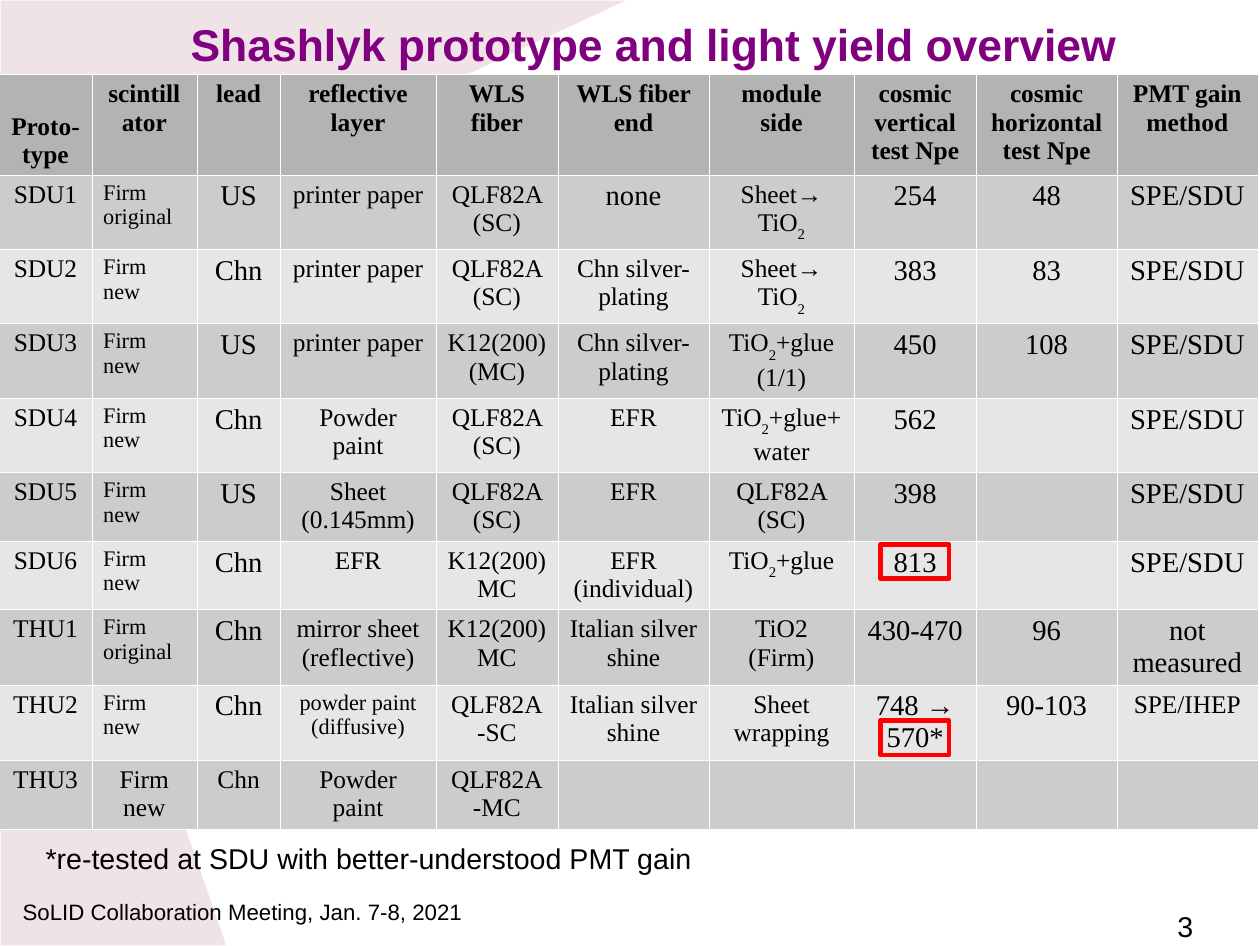
from lxml import etree
from pptx import Presentation
from pptx.dml.color import RGBColor
from pptx.enum.shapes import MSO_SHAPE as Preset
from pptx.enum.text import MSO_ANCHOR as Anchor, PP_ALIGN as Align
from pptx.oxml.ns import qn
from pptx.util import Pt

# Content: "₂" marks a subscript 2
HEADERS = ["Proto-type", "scintillator", "lead", "reflective layer", "WLS fiber",
           "WLS fiber end", "module side", "cosmic vertical test Npe",
           "cosmic horizontal test Npe", "PMT gain method"]
PROTOTYPES = [
    ["SDU1", "Firm original", "US", "printer paper", "QLF82A (SC)", "none",
     "Sheet→ TiO₂", "254", "48", "SPE/SDU"],
    ["SDU2", "Firm new", "Chn", "printer paper", "QLF82A (SC)", "Chn silver-plating",
     "Sheet→ TiO₂", "383", "83", "SPE/SDU"],
    ["SDU3", "Firm new", "US", "printer paper", "K12(200) (MC)", "Chn silver-plating",
     "TiO₂+glue (1/1)", "450", "108", "SPE/SDU"],
    ["SDU4", "Firm new", "Chn", "Powder paint", "QLF82A (SC)", "EFR",
     "TiO₂+glue+water", "562", "", "SPE/SDU"],
    ["SDU5", "Firm new", "US", "Sheet (0.145mm)", "QLF82A (SC)", "EFR",
     "QLF82A (SC)", "398", "", "SPE/SDU"],
    ["SDU6", "Firm new", "Chn", "EFR", "K12(200)MC", "EFR (individual)",
     "TiO₂+glue", "813", "", "SPE/SDU"],
    ["THU1", "Firm original", "Chn", "mirror sheet (reflective)", "K12(200)MC",
     "Italian silver shine", "TiO2 (Firm)", "430-470", "96", "not measured"],
    ["THU2", "Firm new", "Chn", "powder paint (diffusive)", "QLF82A-SC",
     "Italian silver shine", "Sheet wrapping", "748 → 570*", "90-103", "SPE/IHEP"],
    ["THU3", "Firm new", "Chn", "Powder paint", "QLF82A-MC", "", "", "", "", ""],
]
# text, left, top, width, height, size, colour, bold
LABELS = [
    ("SoLID Collaboration Meeting, Jan. 7-8, 2021", 7.2, 561.6, 316.8, 23, 14, "000000", False),
    ("3", 734.4, 568.8, 43.2, 27, 18, "000000", False),
    ("Shashlyk prototype and light yield overview", 113, 7.2, 607, 46, 28, "800080", True),
    ("*re-tested at SDU with better-understood PMT gain", 21.6, 525.6, 511, 27, 18,
     "000000", False),
]

# Layout, in points
SLIDE_WIDTH, SLIDE_HEIGHT = 793.44, 595.44
CORNERS = [
    [(0, 184.3), (143, SLIDE_HEIGHT), (0, SLIDE_HEIGHT)],
    [(0, 184.3), (396, 0), (0, 0)],
]
TABLE_LEFT, TABLE_TOP = -0.5, 46.8
COLUMN_WIDTHS = [58.3, 66.2, 52.6, 97.9, 77, 95, 91.4, 77, 88.6, 88.6]
ROW_HEIGHTS = [63.2] + [46.8] * 4 + [43.2] * 2 + [47.4] * 2 + [43.2]
COLUMN_SIZES = [16, 14, 18, 16, 16, 16, 16, 18, 18, 18]
SPECIAL_SIZES = {"none": 18, "powder paint (diffusive)": 14, "SPE/IHEP": 16}
HIGHLIGHT_TOPS = [342.7, 453.6]


def colour(value):
    return RGBColor.from_string(value)


def add_run(paragraph, text, size, font, text_colour="000000", bold=False):
    run = paragraph.add_run()
    run.text = text
    run.font.size = Pt(size)
    run.font.name = font
    run.font.bold = bold
    run.font.color.rgb = colour(text_colour)
    return run


def add_corner(slide, points):
    builder = slide.shapes.build_freeform(Pt(points[0][0]), Pt(points[0][1]), scale=1.0)
    builder.add_line_segments([(Pt(x), Pt(y)) for x, y in points[1:]], close=True)
    shape = builder.convert_to_shape()
    shape.shadow.inherit = False
    shape.fill.solid()
    shape.fill.fore_color.rgb = colour("94476B")
    fill = shape.fill._xPr.find(qn("a:solidFill"))
    etree.SubElement(fill[0], qn("a:alpha"), val="15000")
    shape.line.color.rgb = colour("FFFFFF")
    shape.line.width = Pt(0.75)


def add_label(slide, text, left, top, width, height, size, text_colour, bold):
    box = slide.shapes.add_textbox(Pt(left), Pt(top), Pt(width), Pt(height))
    box.text_frame.word_wrap = True
    add_run(box.text_frame.paragraphs[0], text, size, "Arial", text_colour, bold)


def set_borders(cell):
    properties = cell._tc.get_or_add_tcPr()
    for side in ("lnL", "lnR", "lnT", "lnB"):
        line = etree.SubElement(properties, qn(f"a:{side}"), w=str(Pt(0.06)))
        fill = etree.SubElement(line, qn("a:solidFill"))
        etree.SubElement(fill, qn("a:srgbClr"), val="FFFFFF")


def fill_cell(cell, text, size, bold, align, background):
    set_borders(cell)
    cell.fill.solid()
    cell.fill.fore_color.rgb = colour(background)
    paragraph = cell.text_frame.paragraphs[0]
    paragraph.alignment = align
    before, subscript, after = text.partition("₂")
    if before:
        add_run(paragraph, before, size, "Times New Roman", bold=bold)
    if subscript:
        run = add_run(paragraph, "2", size, "Times New Roman", bold=bold)
        run._r.get_or_add_rPr().set("baseline", "-33000")
    if after:
        add_run(paragraph, after, size, "Times New Roman", bold=bold)


def add_prototype_table(slide):
    rows = [HEADERS] + PROTOTYPES
    last = len(rows) - 1
    table = slide.shapes.add_table(
        len(rows), len(HEADERS), Pt(TABLE_LEFT), Pt(TABLE_TOP),
        Pt(sum(COLUMN_WIDTHS)), Pt(sum(ROW_HEIGHTS))).table
    for column, width in zip(table.columns, COLUMN_WIDTHS):
        column.width = Pt(width)
    for row, height in zip(table.rows, ROW_HEIGHTS):
        row.height = Pt(height)
    for r, texts in enumerate(rows):
        header = r == 0
        background = "B3B3B3" if header else "CCCCCC" if r % 2 else "E6E6E6"
        for c, text in enumerate(texts):
            edge_row = r in (0, last)
            size = 16 if edge_row else SPECIAL_SIZES.get(text, COLUMN_SIZES[c])
            align = Align.LEFT if c == 1 and not edge_row else Align.CENTER
            fill_cell(table.cell(r, c), text, size, header, align, background)
    table.cell(0, 0).vertical_anchor = Anchor.BOTTOM


def add_highlight(slide, top):
    shape = slide.shapes.add_shape(Preset.RECTANGLE, Pt(554.4), Pt(top), Pt(43.2), Pt(21.6))
    shape.shadow.inherit = False
    shape.fill.background()
    shape.line.color.rgb = colour("FF0000")
    shape.line.width = Pt(2.89)


def main():
    presentation = Presentation()
    presentation.slide_width = Pt(SLIDE_WIDTH)
    presentation.slide_height = Pt(SLIDE_HEIGHT)
    slide = presentation.slides.add_slide(presentation.slide_layouts[6])
    # Background corners, table, labels, then highlighted results
    for points in CORNERS:
        add_corner(slide, points)
    add_prototype_table(slide)
    for label in LABELS:
        add_label(slide, *label)
    for top in HIGHLIGHT_TOPS:
        add_highlight(slide, top)
    presentation.save("out.pptx")


if __name__ == "__main__":
    main()
